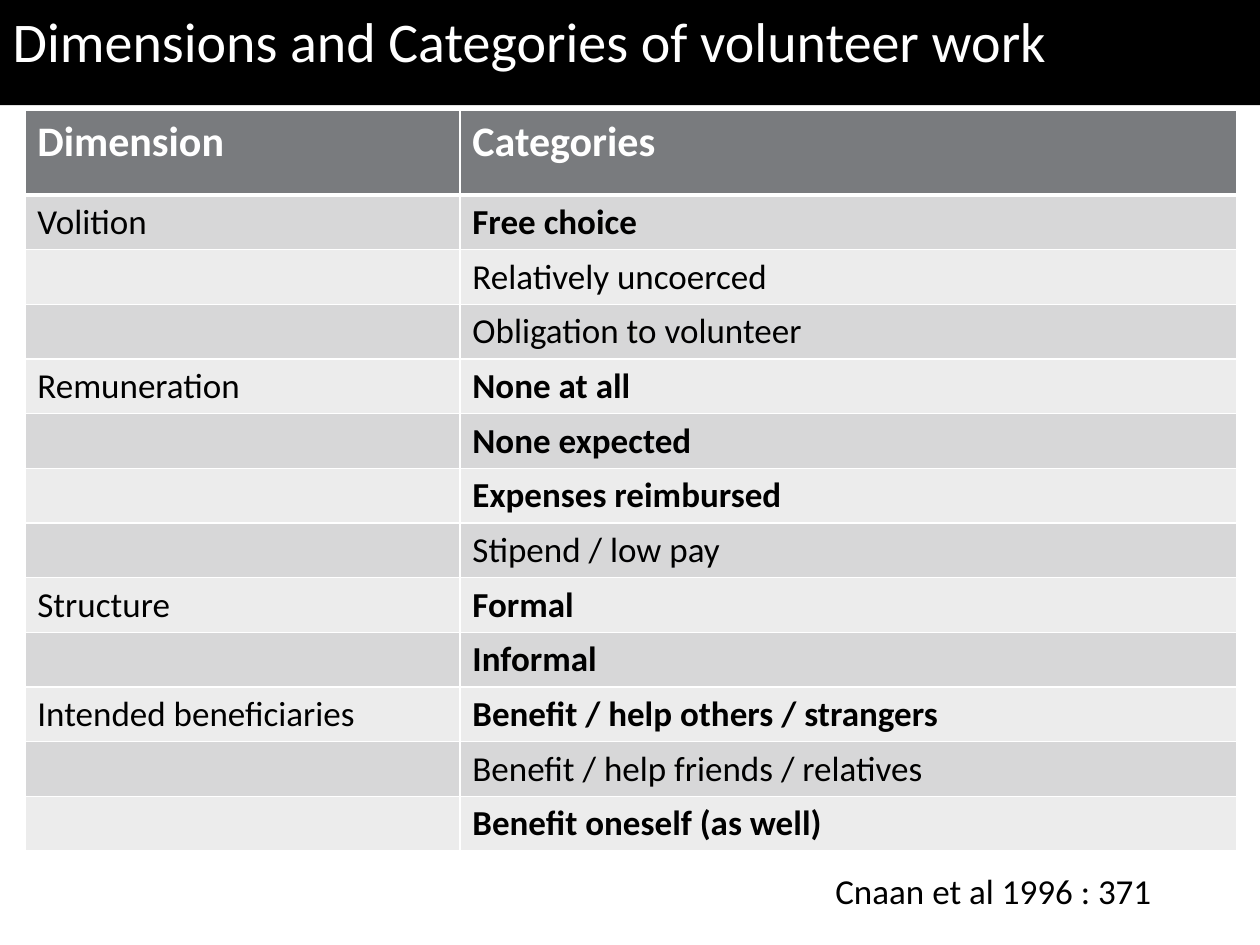
from lxml import etree
from pptx import Presentation
from pptx.dml.color import RGBColor
from pptx.enum.text import MSO_ANCHOR, MSO_AUTO_SIZE, PP_ALIGN
from pptx.oxml.ns import qn
from pptx.util import Cm, Pt

TOP = MSO_ANCHOR.TOP
GROW = MSO_AUTO_SIZE.SHAPE_TO_FIT_TEXT
LEFT = PP_ALIGN.LEFT
TITLE_ONLY = 5

FONT = "Calibri"
COLORS = {"black": "000000", "white": "FFFFFF", "header": "797B7E",
          "odd": "D7D7D8", "even": "ECECEC"}

# Dimension, category, category is bold
ROWS = [
    ("Volition", "Free choice", True),
    ("", "Relatively uncoerced", False),
    ("", "Obligation to volunteer", False),
    ("Remuneration", "None at all", True),
    ("", "None expected", True),
    ("", "Expenses reimbursed", True),
    ("", "Stipend / low pay", False),
    ("Structure", "Formal", True),
    ("", "Informal", True),
    ("Intended beneficiaries", "Benefit / help others / strangers", True),
    ("", "Benefit / help friends / relatives", False),
    ("", "Benefit oneself (as well)", True),
]


def write(frame, text, size, color, bold=False):
    frame.text = text
    paragraph = frame.paragraphs[0]
    paragraph.alignment = LEFT
    for span in paragraph.runs:
        span.font.name = FONT
        span.font.size = Pt(size)
        span.font.bold = bold
        span.font.color.rgb = RGBColor.from_string(COLORS[color])


def format_cell(cell, fill, top, bottom):
    """Fill the cell and give it white borders; top and bottom are in points."""
    properties = cell._tc.get_or_add_tcPr()
    for side, width in (("L", 1), ("R", 1), ("T", top), ("B", bottom)):
        line = etree.SubElement(properties, qn(f"a:ln{side}"), w=str(Pt(width)))
        solid = etree.SubElement(line, qn("a:solidFill"))
        etree.SubElement(solid, qn("a:srgbClr"), val=COLORS["white"])
    cell.fill.solid()
    cell.fill.fore_color.rgb = RGBColor.from_string(COLORS[fill])


deck = Presentation()
deck.slide_width = Cm(25.4)
deck.slide_height = Cm(19.05)
page = deck.slides.add_slide(deck.slide_layouts[TITLE_ONLY])

# Title band
title = page.shapes.title
title.left, title.top, title.width, title.height = Cm(0), Cm(0), Cm(25.4), Cm(1.62)
title.fill.solid()
title.fill.fore_color.rgb = RGBColor.from_string(COLORS["black"])
title.text_frame.vertical_anchor = TOP
title.text_frame.auto_size = GROW
write(title.text_frame, "Dimensions and Categories of volunteer work", 32, "white")

# Table of dimensions and categories
table_frame = page.shapes.add_table(len(ROWS) + 1, 2, Cm(0.5), Cm(2.23), Cm(24.43), Cm(14.9))
table = table_frame.table
table.columns[0].width = Cm(8.77)
table.columns[1].width = Cm(15.66)
table.rows[0].height = Cm(1.7)

for column, heading in enumerate(("Dimension", "Categories")):
    cell = table.cell(0, column)
    write(cell.text_frame, heading, 24, "white", bold=True)
    format_cell(cell, "header", top=1, bottom=3)

for number, (dimension, category, bold) in enumerate(ROWS, start=1):
    table.rows[number].height = Cm(1.04)
    for column, (text, is_bold) in enumerate(((dimension, False), (category, bold))):
        cell = table.cell(number, column)
        write(cell.text_frame, text, 20, "black", is_bold)
        format_cell(cell, "odd" if number % 2 else "even",
                    top=3 if number == 1 else 1, bottom=1)

# Reference
reference = page.shapes.add_textbox(Cm(16.59), Cm(17.4), Cm(7.77), Cm(1.11))
reference.text_frame.word_wrap = True
reference.text_frame.auto_size = GROW
write(reference.text_frame, "Cnaan et al 1996 : 371", 20, "black")

deck.save("out.pptx")
